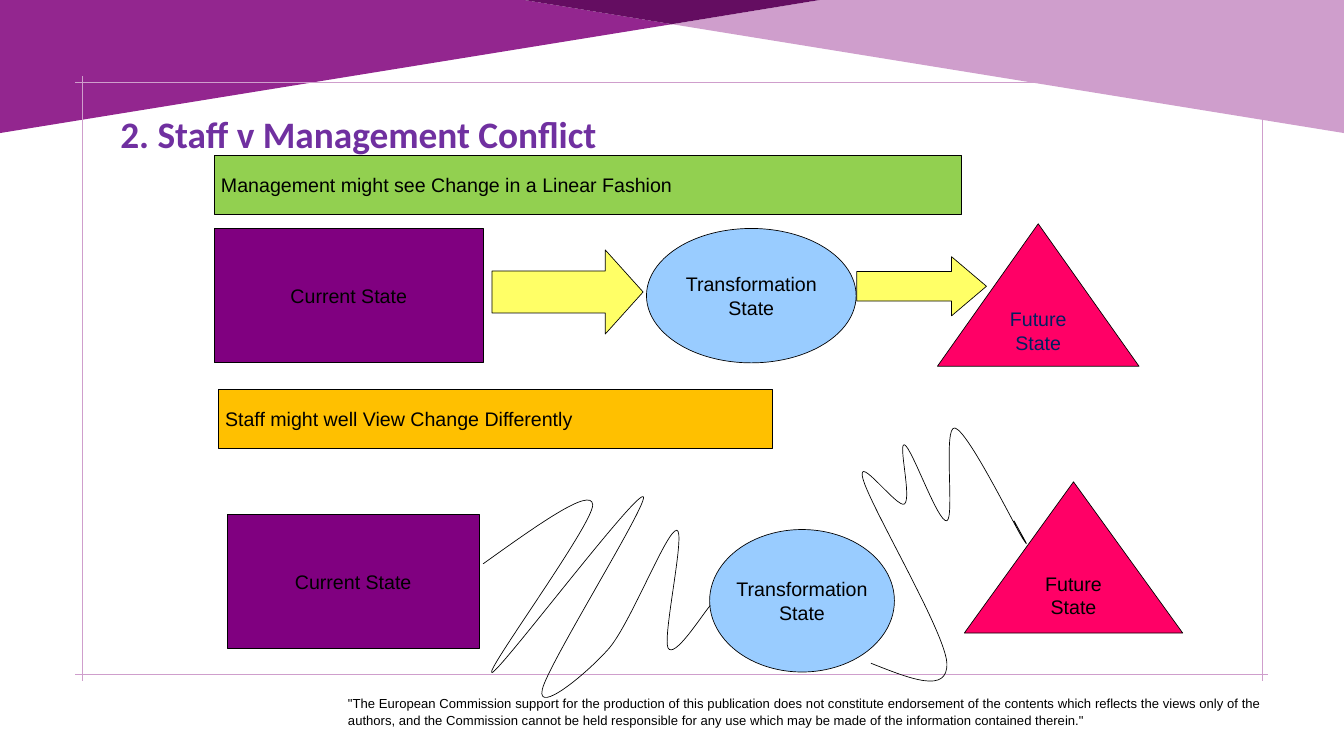
from lxml import etree
from pptx import Presentation
from pptx.dml.color import RGBColor
from pptx.enum.shapes import MSO_CONNECTOR, MSO_SHAPE as SHAPE
from pptx.enum.text import MSO_ANCHOR, MSO_AUTO_SIZE, PP_ALIGN as ALIGN
from pptx.oxml.ns import qn
from pptx.util import Inches, Pt

COLORS = {
    "purple": "93268F", "lilac": "CF9ECC", "plum": "640D61", "title": "7030A0",
    "current": "800080", "arrow": "FFFF66", "transform": "99CCFF", "future": "FF0066",
    "green": "92D050", "orange": "FFC000", "navy": "002060", "black": "000000",
}
RGB = {name: RGBColor.from_string(value) for name, value in COLORS.items()}

prs = Presentation()
prs.slide_width, prs.slide_height = Inches(20), Inches(11.25)
s = prs.slides.add_slide(prs.slide_layouts[5])


def add_outline(points, close):
    pts = [(Inches(x), Inches(y)) for x, y in points]
    builder = s.shapes.build_freeform(*pts[0], scale=1.0)
    builder.add_line_segments(pts[1:], close=close)
    sp = builder.convert_to_shape()
    sp.shadow.inherit = False
    return sp


def add_text(tf, lines, size, color, align, font="Arial", bold=False):
    for i, line in enumerate(lines):
        p = tf.paragraphs[0] if i == 0 else tf.add_paragraph()
        p.alignment = align
        r = p.add_run()
        r.text = line
        r.font.name, r.font.size, r.font.bold = font, Pt(size), bold
        r.font.color.rgb = RGB[color]


banner = [
    ("purple", [(0, 1.98), (0, 0), (7.8, 0), (10, 0.36)]),
    ("lilac", [(20, 1.98), (10, 0.36), (12.2, 0), (20, 0)]),
    ("plum", [(10, 0.36), (7.8, 0), (12.2, 0)]),
]
for color, points in banner:
    sp = add_outline(points, True)
    sp.fill.solid()
    sp.fill.fore_color.rgb = RGB[color]
    sp.line.fill.background()

frame = [
    (1.12, 1.22, 18.87, 1.22), (1.12, 10.03, 18.87, 10.03),
    (1.22, 1.13, 1.22, 10.13), (18.78, 1.13, 18.78, 10.13),
]
for ends in frame:
    line = s.shapes.add_connector(MSO_CONNECTOR.STRAIGHT, *map(Inches, ends))
    line.line.color.rgb = RGB["lilac"]
    line.line.width = Pt(0.5)
    etree.SubElement(line._element.spPr, qn("a:effectLst"))

disclaimer = s.shapes.add_textbox(Inches(5.08), Inches(10.29), Inches(13.79), Inches(0.52))
tf = disclaimer.text_frame
tf.word_wrap = True
add_text(tf, [
    '"The European Commission support for the production of this publication does not '
    'constitute endorsement of the contents which reflects the views only of the authors, '
    'and the Commission cannot be held responsible for any use which may be made of the '
    'information contained therein."'
], 14, "black", ALIGN.JUSTIFY)
tf.paragraphs[0].line_spacing = 1.07

title = s.shapes.title
title.left, title.top, title.width, title.height = map(Inches, (1.69, 1.6, 13.5, 1.04))
tf = title.text_frame
tf.vertical_anchor = MSO_ANCHOR.TOP
tf.auto_size = MSO_AUTO_SIZE.NONE
add_text(tf, ["2. Staff v Management Conflict"], 40, "title", ALIGN.LEFT, "Calibri", True)

current = ["Current State"]
transform = ["Transformation", "State"]
future = ["Future", "State"]
linear = ["Management might see Change in a Linear Fashion"]
differently = ["Staff might well View Change Differently"]
diagram = [
    (SHAPE.RECTANGLE, (3.19, 3.4, 4, 2), "current", current, "black", ALIGN.CENTER),
    (SHAPE.RIGHT_ARROW, (7.32, 3.72, 2.25, 1.25), "arrow", [], "black", ALIGN.CENTER),
    (SHAPE.OVAL, (9.62, 3.4, 3.12, 2), "transform", transform, "black", ALIGN.CENTER),
    (SHAPE.RIGHT_ARROW, (12.75, 3.82, 1.93, 0.88), "arrow", [], "black", ALIGN.CENTER),
    (SHAPE.ISOSCELES_TRIANGLE, (13.95, 3.33, 3, 2.12), "future", future, "navy", ALIGN.CENTER),
    (SHAPE.RECTANGLE, (3.19, 2.31, 11.12, 0.88), "green", linear, "black", ALIGN.LEFT),
    (SHAPE.RECTANGLE, (3.38, 7.65, 3.75, 2), "current", current, "black", ALIGN.CENTER),
    (SHAPE.OVAL, (10.56, 7.88, 2.75, 2.12), "transform", transform, "black", ALIGN.CENTER),
    (SHAPE.ISOSCELES_TRIANGLE, (14.35, 7.17, 3.25, 2.25), "future", future, "black", ALIGN.CENTER),
    (SHAPE.RECTANGLE, (3.25, 5.79, 8.25, 0.88), "orange", differently, "black", ALIGN.LEFT),
]
for kind, box, fill, lines, color, align in diagram:
    sp = s.shapes.add_shape(kind, *map(Inches, box))
    sp.shadow.inherit = False
    sp.fill.solid()
    sp.fill.fore_color.rgb = RGB[fill]
    sp.line.color.rgb = RGB["black"]
    sp.line.width = Pt(0.75)
    if kind == SHAPE.RIGHT_ARROW:
        sp.adjustments[1] = 0.45 if box[0] < 10 else 0.59
    tf = sp.text_frame
    tf.vertical_anchor = MSO_ANCHOR.MIDDLE
    tf.word_wrap = align == ALIGN.LEFT
    add_text(tf, lines, 21, color, align)

scribbles = [
    [(7.19, 8.39),
     (8, 7.81), (8.8, 7.24), (8.82, 7.51),
     (8.84, 7.78), (7.19, 10.03), (7.32, 10.01),
     (7.44, 9.99), (9.44, 7.34), (9.57, 7.39),
     (9.69, 7.43), (8.15, 9.89), (8.07, 10.26),
     (7.98, 10.64), (8.73, 10.03), (9.07, 9.64),
     (9.4, 9.24), (9.92, 7.89), (10.07, 7.89),
     (10.21, 7.89), (9.86, 9.45), (9.94, 9.64),
     (10.03, 9.82), (10.44, 9.16), (10.57, 9.01)],
    [(12.96, 9.87),
     (13.54, 10.1), (14.11, 10.33), (14.09, 9.87),
     (14.07, 9.41), (12.94, 7.52), (12.84, 7.12),
     (12.74, 6.73), (13.36, 7.58), (13.46, 7.5),
     (13.57, 7.41), (13.36, 6.58), (13.46, 6.62),
     (13.57, 6.66), (13.96, 7.79), (14.09, 7.75),
     (14.21, 7.71), (14.03, 6.33), (14.21, 6.37),
     (14.4, 6.41), (15.07, 7.77), (15.21, 8),
     (15.36, 8.23), (15.22, 7.99), (15.09, 7.75)],
]
for points in scribbles:
    sp = add_outline(points, False)
    sp.fill.background()
    sp.line.color.rgb = RGB["black"]
    sp.line.width = Pt(0.75)
    outline = sp._element.find(".//" + qn("a:path"))
    segments = outline.findall(qn("a:lnTo"))
    for i in range(0, len(segments), 3):
        curve = etree.SubElement(outline, qn("a:cubicBezTo"))
        for segment in segments[i:i + 3]:
            curve.append(segment[0])
            outline.remove(segment)

prs.save("out.pptx")
